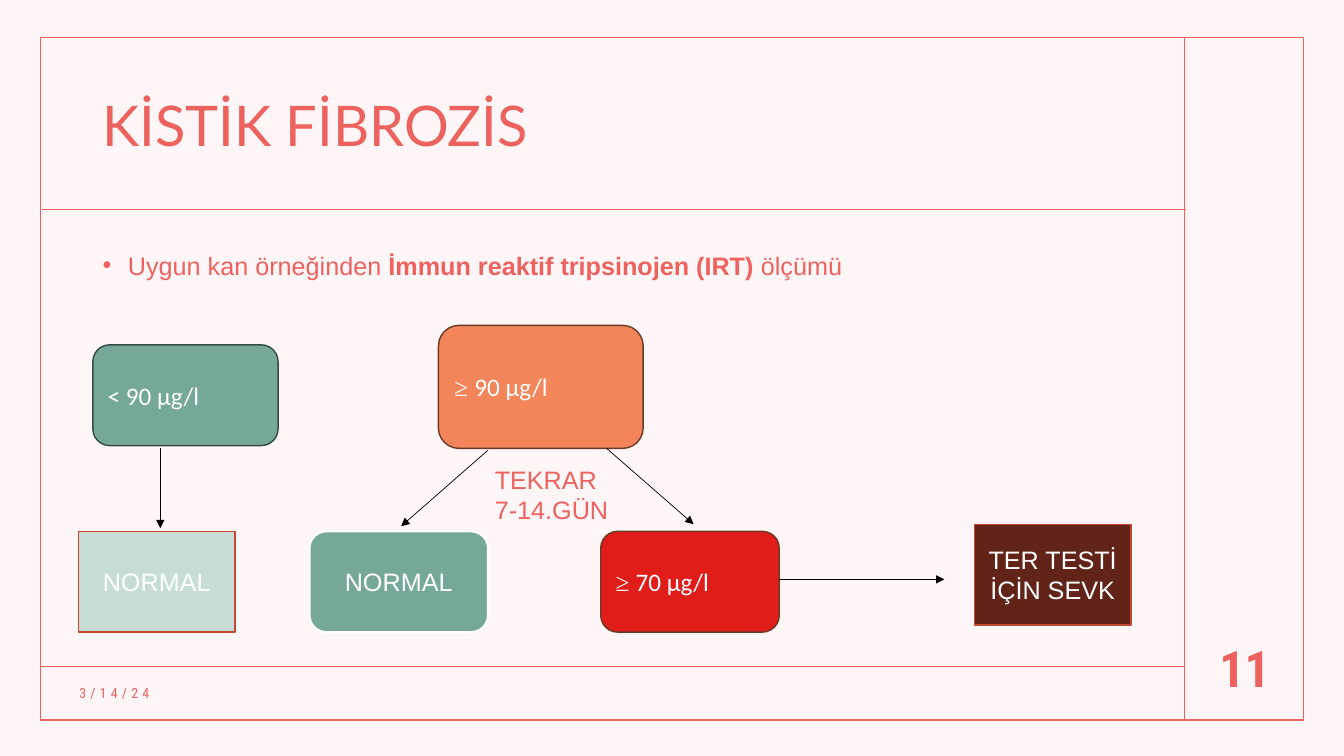
"""Build the cystic fibrosis screening slide with its IRT decision flow."""
import pptx
import pptx.dml.color
import pptx.enum.shapes
import pptx.enum.text
import pptx.oxml.ns
import pptx.util
from lxml import etree

Cm = pptx.util.Cm
Pt = pptx.util.Pt
SHAPES = pptx.enum.shapes.MSO_SHAPE
ANCHOR = pptx.enum.text.MSO_ANCHOR
ALIGN = pptx.enum.text.PP_ALIGN

COLORS = {
    "coral": "ED625F", "white": "FFFFFF", "black": "000000",
    "green": "76A899", "dark green": "344A43", "pale green": "C8DCD6",
    "orange": "F2855A", "brown": "6A3A27", "red": "E01D19",
    "maroon": "622319", "rust": "C44732",
}

SLIDE_SIZE = (33.87, 19.05)
FRAME = (1.02, 0.94, 31.83, 17.2)
RULES = [
    ((29.85, 0.94), (29.85, 18.11)),
    ((1.04, 16.79), (29.85, 16.79)),
    ((1.07, 5.28), (29.9, 5.28)),
]

TITLE = [[("KİSTİK FİBROZİS", "Lato")]]
BODY = [[
    ("Uygun kan örneğinden ", "Arial"),
    ("İmmun reaktif tripsinojen (IRT) ", "Arial", True),
    ("ölçümü", "Arial"),
]]
DATE = [[("3/14/24", "Roboto Condensed")]]
NUMBER = [[("11", "Roboto Condensed", True)]]
REPEAT = [[("TEKRAR", "Arial")], [("7-14.GÜN", "Arial")]]
TEXTS = [
    ((2.34, 1.52, 26.47, 3.45), TITLE, {"size": 40, "line_spacing": 0.9}),
    ((2.34, 5.87, 26.47, 10.13), BODY,
     {"anchor": ANCHOR.TOP, "line_spacing": 1.4, "space_before": 10, "bullet": "•"}),
    ((1.75, 17.07, 8.76, 0.79), DATE, {"size": 10, "tracking": 3}),
    ((30.05, 15.75, 2.64, 2.11), NUMBER, {"size": 36, "align": ALIGN.CENTER}),
    ((12.22, 11.58, 3.94, 1.8), REPEAT, {"anchor": ANCHOR.TOP}),
]

ROUNDED = SHAPES.ROUNDED_RECTANGLE
PLAIN = SHAPES.RECTANGLE
NORMAL = [("NORMAL", "Arial")]
BOXES = [
    (ROUNDED, (2.34, 8.69, 4.67, 2.54), "green", "dark green", 1,
     [("< 90 μg/l", "Calibri")], ALIGN.LEFT),
    (ROUNDED, (11.05, 8.2, 5.16, 3.1), "orange", "brown", 1,
     [("≥ ", "Times New Roman"), ("90 μg/l", "Calibri")], ALIGN.LEFT),
    (PLAIN, (1.98, 13.39, 3.94, 2.54), "pale green", "rust", 1, NORMAL, ALIGN.CENTER),
    (ROUNDED, (7.8, 13.39, 4.5, 2.54), "green", "white", 1.5, NORMAL, ALIGN.CENTER),
    (ROUNDED, (15.14, 13.39, 4.5, 2.54), "red", "brown", 1,
     [("≥ ", "Times New Roman"), ("70 μg/l", "Calibri")], ALIGN.LEFT),
    (PLAIN, (24.56, 13.21, 3.94, 2.54), "maroon", "rust", 1,
     [("TER TESTİ İÇİN SEVK", "Arial")], ALIGN.CENTER),
]
ARROWS = [
    ((4.04, 11.3), (4.04, 13.31)),
    ((12.29, 11.35), (10.11, 13.26)),
    ((15.29, 11.3), (17.48, 13.21)),
    ((19.63, 14.6), (23.8, 14.6)),
]


def rgb(name):
    return pptx.dml.color.RGBColor.from_string(COLORS[name])


def add_child(parent, tag, **attributes):
    return etree.SubElement(parent, pptx.oxml.ns.qn(tag), **attributes)


def write(shape, paragraphs, size=18, color="coral", align=ALIGN.LEFT,
          anchor=ANCHOR.MIDDLE, line_spacing=1.0, space_before=0,
          bullet=None, tracking=None):
    frame = shape.text_frame
    frame.word_wrap = True
    frame.vertical_anchor = anchor
    for index, runs in enumerate(paragraphs):
        paragraph = frame.add_paragraph() if index else frame.paragraphs[0]
        paragraph.alignment = align
        paragraph.line_spacing = line_spacing
        paragraph.space_before = Pt(space_before)
        if bullet:
            properties = paragraph._p.get_or_add_pPr()
            indent = int(Cm(0.635))
            properties.set("marL", str(indent))
            properties.set("indent", str(-indent))
            add_child(properties, "a:buFont", typeface="Arial")
            add_child(properties, "a:buChar", char=bullet)
        for text, font, *bold in runs:
            run = paragraph.add_run()
            run.text = text
            run.font.name = font
            run.font.size = Pt(size)
            run.font.bold = bool(bold)
            run.font.color.rgb = rgb(color)
            if tracking:
                run._r.get_or_add_rPr().set("spc", str(tracking * 100))


def add_box(slide, kind, place, fill=None, line=None, width=1):
    shape = slide.shapes.add_shape(kind, *map(Cm, place))
    shape.shadow.inherit = False
    if fill:
        shape.fill.solid()
        shape.fill.fore_color.rgb = rgb(fill)
    else:
        shape.fill.background()
    if line:
        shape.line.color.rgb = rgb(line)
        shape.line.width = Pt(width)
    else:
        shape.line.fill.background()
    return shape


def add_line(slide, start, end, color, width, arrow=False):
    connector = slide.shapes.add_connector(
        pptx.enum.shapes.MSO_CONNECTOR.STRAIGHT, *map(Cm, start + end))
    connector.line.color.rgb = rgb(color)
    connector.line.width = Pt(width)
    if arrow:
        add_child(connector.line._get_or_add_ln(), "a:tailEnd", type="triangle")
    add_child(connector._element.spPr, "a:effectLst")


def main():
    presentation = pptx.Presentation()
    presentation.slide_width, presentation.slide_height = map(Cm, SLIDE_SIZE)
    slide = presentation.slides.add_slide(presentation.slide_layouts[6])

    tint = add_box(slide, PLAIN, (0, 0) + SLIDE_SIZE, fill="coral")
    tint_color = tint._element.spPr.find(".//" + pptx.oxml.ns.qn("a:srgbClr"))
    add_child(tint_color, "a:alpha", val="5000")
    add_box(slide, PLAIN, FRAME, line="coral")
    for start, end in RULES:
        add_line(slide, start, end, "coral", 1)

    for place, paragraphs, style in TEXTS:
        write(slide.shapes.add_textbox(*map(Cm, place)), paragraphs, **style)
    for kind, place, fill, line, width, runs, align in BOXES:
        box = add_box(slide, kind, place, fill, line, width)
        write(box, [runs], color="white", align=align)
    for start, end in ARROWS:
        add_line(slide, start, end, "black", 0.5, arrow=True)

    presentation.save("out.pptx")


if __name__ == "__main__":
    main()
